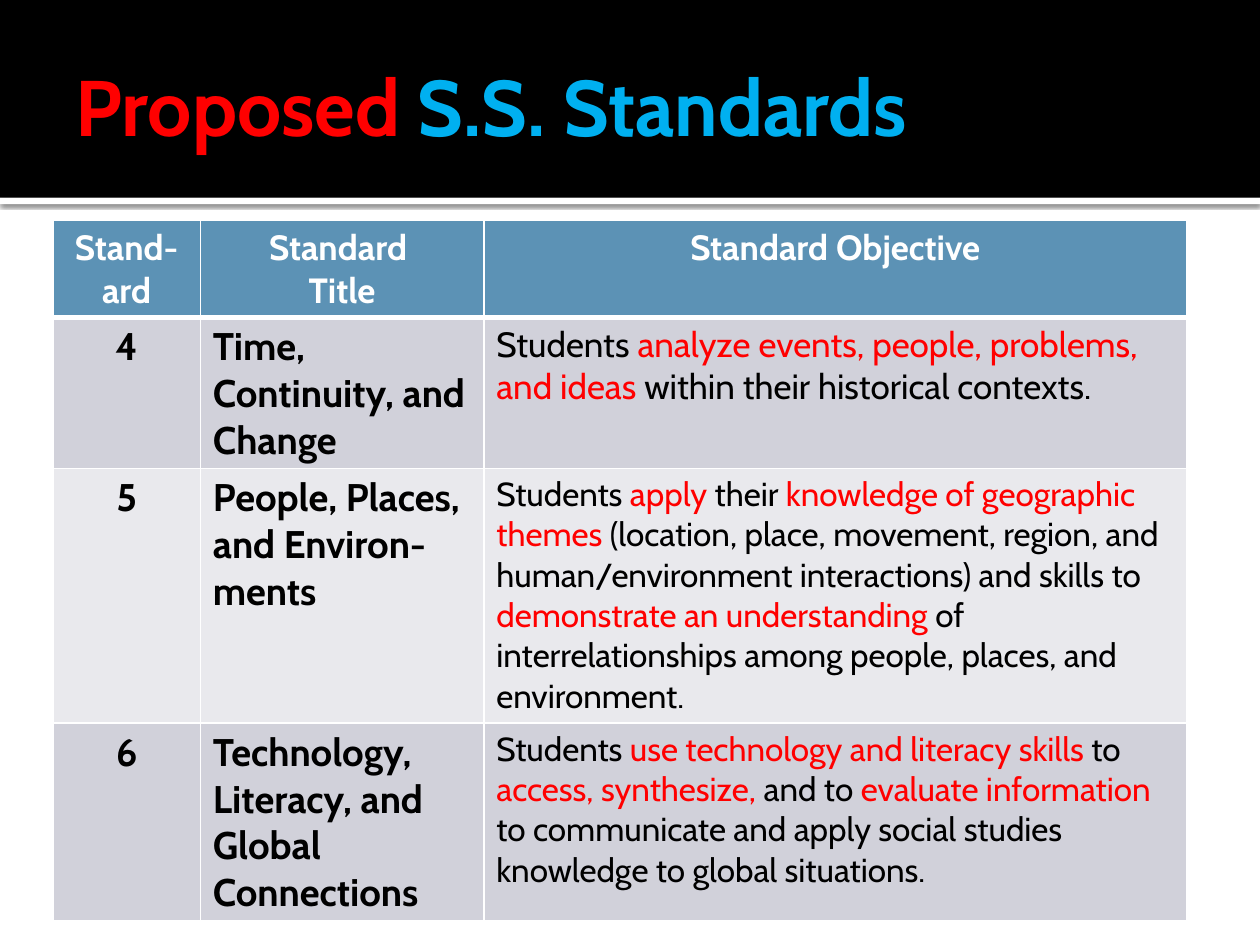
from lxml.etree import SubElement
from pptx import Presentation
from pptx.dml.color import RGBColor
from pptx.enum.shapes import MSO_SHAPE as Shape
from pptx.enum.text import MSO_ANCHOR as Anchor, PP_ALIGN as Align
from pptx.oxml.ns import qn
from pptx.util import Inches, Pt

# Content: objectives alternate between plain and highlighted wording
TITLE = [("Proposed ", "red"), ("S.S. Standards", "blue")]
HEADERS = [["Stand-ard"], ["Standard ", "Title"], ["Standard Objective"]]
STANDARDS = [
    ("4", "Time, Continuity, and Change", "objective_large",
     ["Students ", "analyze events, people, problems, and ideas",
      " within their historical contexts."]),
    ("5", "People, Places, and Environ-ments", "objective",
     ["Students ", "apply ", "their ", "knowledge of geographic themes",
      " (location, place, movement, region, and human/environment interactions)"
      " and skills to ", "demonstrate an understanding ",
      "of interrelationships among people, places, and environment."]),
    ("6", "Technology, Literacy, and Global Connections", "objective",
     ["Students ", "use technology and literacy skills ", "to ",
      "access, synthesize, ", "and to ", "evaluate information ",
      "to communicate and apply social studies knowledge to global situations."]),
]
COLUMN_WIDTHS = [1.17, 2.25, 5.58]
ROW_HEIGHTS = [0.76, 1.2, 2.02, 1.55]

THEME = {
    "font": "Cabin",
    "colors": {"black": "000000", "white": "FFFFFF", "red": "FF0000",
               "blue": "00B0F0", "header": "5C92B5",
               "bands": ["D1D1DA", "E9E9ED"]},
    "sizes": {"title": 45, "header": 20, "standard": 22,
              "objective_large": 20, "objective": 19},
}
COLORS = THEME["colors"]


def set_fill(target, color):
    target.fill.solid()
    target.fill.fore_color.rgb = RGBColor.from_string(color)


def write_runs(paragraph, runs, size, bold, align=Align.LEFT):
    paragraph.alignment = align
    for text, color in runs:
        run = paragraph.add_run()
        run.text = text
        font_format = {"name": THEME["font"], "bold": bold,
                       "size": Pt(THEME["sizes"][size])}
        for name, value in font_format.items():
            setattr(run.font, name, value)
        run.font.color.rgb = RGBColor.from_string(COLORS[color])


def add_bar(slide, top, height, color):
    bar = slide.shapes.add_shape(Shape.RECTANGLE, 0, Inches(top),
                                 Inches(10), Inches(height))
    bar.shadow.inherit = False
    set_fill(bar, color)
    bar.line.fill.background()
    return bar


def add_shadow(shape):
    effects = shape._element.spPr.find(qn("a:effectLst"))
    shadow = SubElement(effects, qn("a:outerShdw"), blurRad=str(Pt(2.5)),
                        dist=str(Pt(0.8)), dir="5400000", algn="tl",
                        rotWithShape="0")
    color = SubElement(shadow, qn("a:srgbClr"), val=COLORS["black"])
    SubElement(color, qn("a:alpha"), val="60000")


def format_cell(cell, row):
    # Borders come before the fill in the cell properties
    widths = {"lnL": 1, "lnR": 1, "lnT": 3 if row == 1 else 1,
              "lnB": 3 if row == 0 else 1}
    properties = cell._tc.get_or_add_tcPr()
    for side, width in widths.items():
        line = SubElement(properties, qn(f"a:{side}"), w=str(Pt(width)))
        fill = SubElement(line, qn("a:solidFill"))
        SubElement(fill, qn("a:srgbClr"), val=COLORS["white"])
    set_fill(cell, COLORS["bands"][(row - 1) % 2] if row else COLORS["header"])


def add_title(slide):
    box = slide.shapes.add_textbox(Inches(0.5), Inches(0.33), Inches(9), Inches(1))
    frame = box.text_frame
    frame_format = {"word_wrap": True, "vertical_anchor": Anchor.MIDDLE,
                    "margin_left": Inches(0.1), "margin_right": Inches(0.05),
                    "margin_top": Inches(0.05), "margin_bottom": Inches(0.05)}
    for name, value in frame_format.items():
        setattr(frame, name, value)
    write_runs(frame.paragraphs[0], TITLE, "title", True)


def add_standards_table(slide):
    table = slide.shapes.add_table(
        len(ROW_HEIGHTS), len(COLUMN_WIDTHS), Inches(0.42), Inches(1.75),
        Inches(sum(COLUMN_WIDTHS)), Inches(sum(ROW_HEIGHTS))).table
    table.first_row = table.horz_banding = False
    for column, width in zip(table.columns, COLUMN_WIDTHS):
        column.width = Inches(width)
    for row, (table_row, height) in enumerate(zip(table.rows, ROW_HEIGHTS)):
        table_row.height = Inches(height)
        for cell in table_row.cells:
            format_cell(cell, row)

    # Header row
    for column, lines in enumerate(HEADERS):
        frame = table.cell(0, column).text_frame
        for index, line in enumerate(lines):
            paragraph = frame.add_paragraph() if index else frame.paragraphs[0]
            write_runs(paragraph, [(line, "white")], "header", True, Align.CENTER)

    # One row for each standard
    for row, (number, name, size, parts) in enumerate(STANDARDS, start=1):
        objective = [(text, "red" if index % 2 else "black")
                     for index, text in enumerate(parts)]
        entries = [([(number, "black")], "standard", True, Align.CENTER),
                   ([(name, "black")], "standard", True),
                   (objective, size, False)]
        for column, entry in enumerate(entries):
            write_runs(table.cell(row, column).text_frame.paragraphs[0], *entry)


def main():
    presentation = Presentation()
    presentation.slide_width, presentation.slide_height = Inches(10), Inches(7.5)
    slide = presentation.slides.add_slide(presentation.slide_layouts[6])
    set_fill(slide.background, COLORS["white"])

    # Title band with a shadowed white rule below it
    add_shadow(add_bar(slide, 1.57, 0.05, COLORS["white"]))
    add_bar(slide, 0, 1.57, COLORS["black"])
    add_title(slide)
    add_standards_table(slide)
    presentation.save("out.pptx")


if __name__ == "__main__":
    main()
